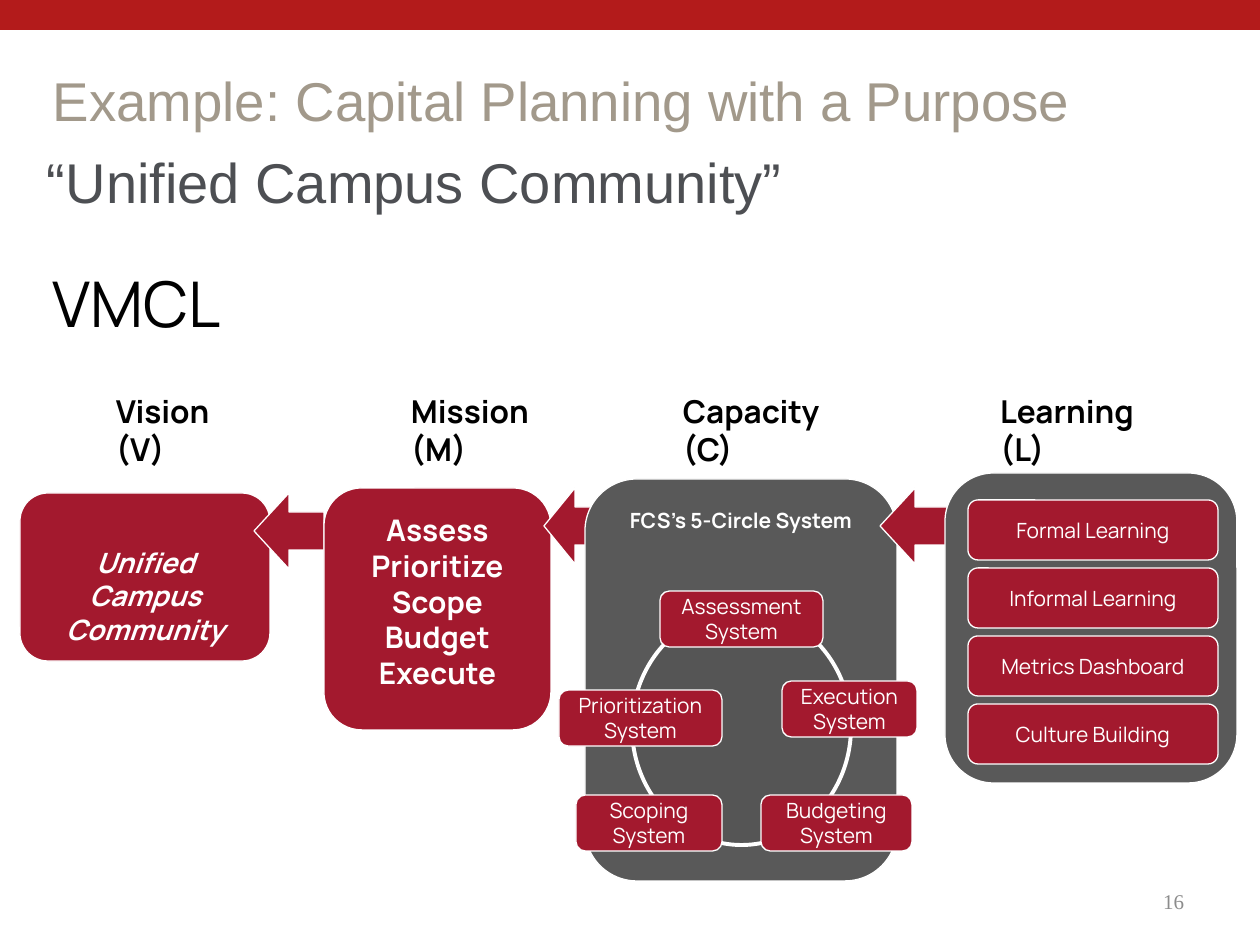
"""Build the VMCL capital planning slide."""
from pptx import Presentation
from pptx.dml.color import RGBColor
from pptx.enum.shapes import MSO_SHAPE as Shape
from pptx.enum.text import MSO_ANCHOR as Anchor, PP_ALIGN as Align
from pptx.util import Pt

SCALE = 914400 / 126
RED, GRAY, WHITE, BLACK = "A3192E", "595959", "FFFFFF", "000000"
INSET = 13

HEADINGS = [
    ("Vision (V)", 103, 170),
    ("Mission (M)", 398, 170),
    ("Capacity (C)", 670, 188),
    ("Learning (L)", 987, 170),
]
MISSION_STEPS = ["Assess", "Prioritize", "Scope", "Budget", "Execute"]
LEARNING_PARTS = ["Formal Learning", "Informal Learning", "Metrics Dashboard", "Culture Building"]
SYSTEMS = [
    ("Assessment System", 660, 591, 163),
    ("Execution System", 782, 681, 135),
    ("Prioritization System", 559, 690, 163),
    ("Budgeting System", 761, 795, 151),
    ("Scoping System", 576, 795, 146),
]


def px(length):
    """Turn slide pixels into EMU."""
    return round(length * SCALE)


def color(code):
    """Turn a hex string into a colour."""
    return RGBColor.from_string(code)


def write(box, lines, size, ink, align=Align.LEFT, anchor=Anchor.TOP,
          inset=INSET, top=None, spacing=None, **style):
    """Write one paragraph per line into a shape."""
    frame = box.text_frame
    top = inset if top is None else top
    settings = {
        "word_wrap": True,
        "vertical_anchor": anchor,
        "margin_left": px(INSET),
        "margin_right": px(INSET),
        "margin_top": px(top),
        "margin_bottom": px(inset),
    }
    for name, value in settings.items():
        setattr(frame, name, value)
    font_format = {"name": "Manrope", "size": Pt(size)} | style
    for index, line in enumerate(lines):
        para = frame.add_paragraph() if index else frame.paragraphs[0]
        para.alignment = align
        if spacing:
            para.line_spacing = spacing
        span = para.add_run()
        span.text = line
        for name, value in font_format.items():
            setattr(span.font, name, value)
        span.font.color.rgb = color(ink)


def add_label(page, place, text, size, ink, **style):
    """Add a text box with one paragraph."""
    box = page.shapes.add_textbox(*map(px, place))
    write(box, [text], size, ink, **style)


def add_block(page, kind, place, fill, outline=0.75):
    """Add a filled shape with a white outline, or none at width zero."""
    block = page.shapes.add_shape(kind, *map(px, place))
    block.shadow.inherit = False
    block.fill.solid()
    block.fill.fore_color.rgb = color(fill)
    if outline:
        block.line.color.rgb = color(WHITE)
        block.line.width = Pt(outline)
    else:
        block.line.fill.background()
    return block


def add_panel(page, place, fill, lines=(), size=12, **style):
    """Add a rounded panel with centred white text."""
    panel = add_block(page, Shape.ROUNDED_RECTANGLE, place, fill)
    write(panel, lines, size, WHITE, align=Align.CENTER, **style)


def add_arrow(page, left, top, width):
    """Add a red arrow that points to the panel on the left."""
    add_block(page, Shape.LEFT_ARROW, (left, top, width, 76), RED)


def add_titles(page):
    """Add the top band, titles and page number."""
    add_block(page, Shape.RECTANGLE, (0, 0, 1260, 30), "B31B1B", outline=0)
    middle = {"anchor": Anchor.MIDDLE, "inset": 6}
    add_label(page, (903, 876, 294, 50), "16", 12, "8C8C8C",
              name="Times New Roman", align=Align.RIGHT, **middle)
    add_label(page, (40, 53, 1196, 94), "Example: Capital Planning with a Purpose",
              31.2, "A2998B", name="Arial", **middle)
    add_label(page, (34, 134, 901, 94), "“Unified Campus Community”",
              32, "4D4F53", name="Arial", **middle)
    add_label(page, (40, 266, 916, 87), "VMCL", 36, BLACK, spacing=0.8)


def add_chain(page):
    """Add the four panels, joined by arrows."""
    for text, left, width in HEADINGS:
        add_label(page, (left, 379, width, 102), text, 18, BLACK, bold=True)
    add_panel(page, (20, 493, 250, 168), RED, ["Unified Campus Community"],
              16, top=44, bold=True, italic=True)
    add_arrow(page, 254, 493, 70)
    add_panel(page, (324, 488, 227, 242), RED, MISSION_STEPS, 17, bold=True)
    add_arrow(page, 544, 488, 62)
    add_panel(page, (585, 479, 312, 402), GRAY, ["FCS’s 5-Circle System"], bold=True)
    add_arrow(page, 880, 488, 70)
    add_panel(page, (945, 473, 292, 310), GRAY)


def add_details(page):
    """Add the learning parts and the circle of systems."""
    for index, text in enumerate(LEARNING_PARTS):
        add_panel(page, (968, 500 + 68 * index, 250, 60), RED, [text], anchor=Anchor.MIDDLE)
    add_block(page, Shape.OVAL, (632, 610, 219, 235), "555555", outline=2.25)
    for text, left, top, width in SYSTEMS:
        add_panel(page, (left, top, width, 56), RED, [text], anchor=Anchor.MIDDLE)


def main():
    """Build and save the deck."""
    deck = Presentation()
    deck.slide_width, deck.slide_height = px(1260), px(945)
    page = deck.slides.add_slide(deck.slide_layouts[6])
    add_titles(page)
    add_chain(page)
    add_details(page)
    deck.save("out.pptx")


if __name__ == "__main__":
    main()
